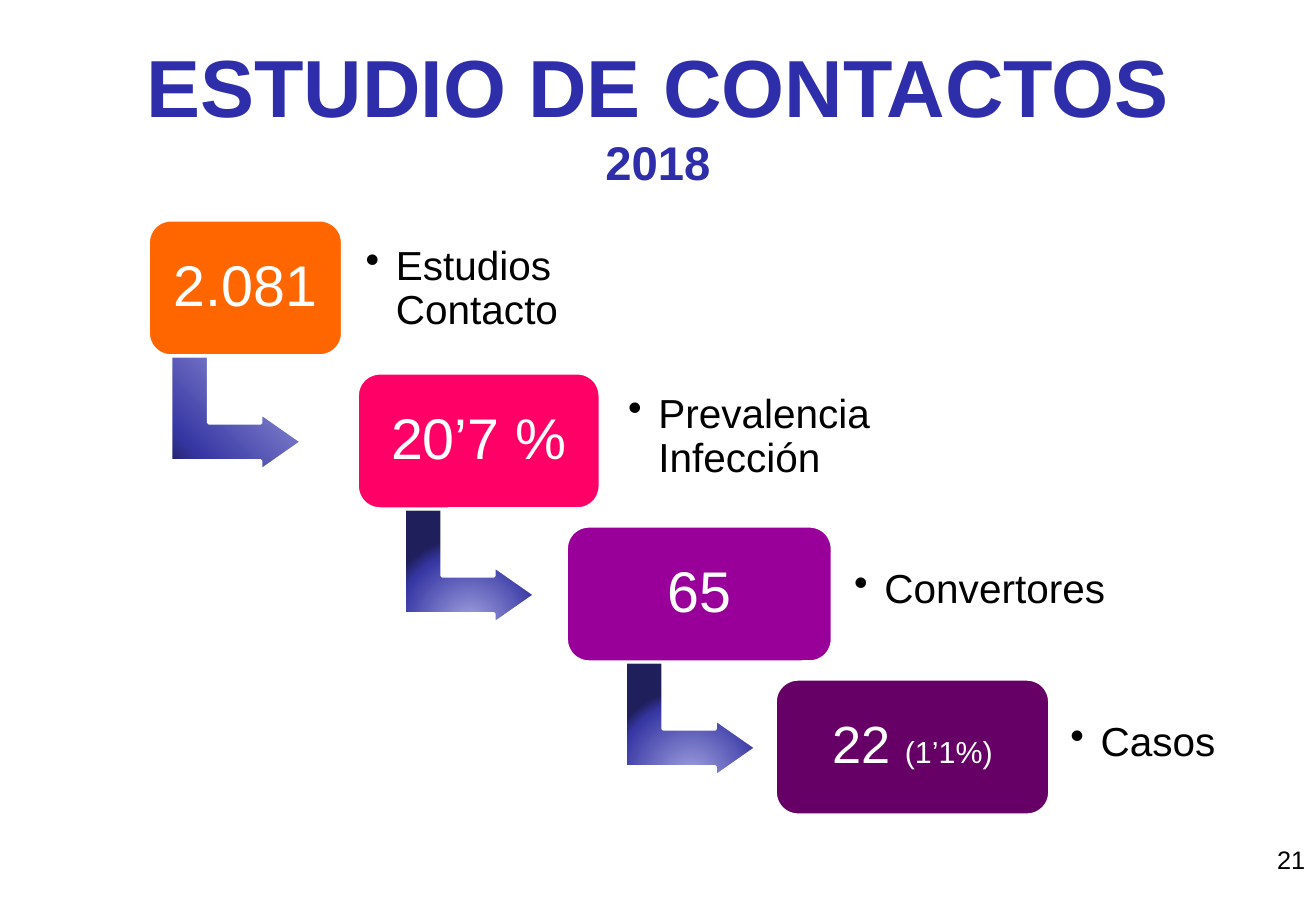
from lxml import etree
from pptx import Presentation
from pptx import util as u
from pptx.dml.color import RGBColor
from pptx.enum import shapes, text
from pptx.oxml import parse_xml
from pptx.oxml.ns import nsdecls, qn

PX = 9144
WHITE = RGBColor(0xFF, 0xFF, 0xFF)
BLACK = RGBColor(0x00, 0x00, 0x00)
BLUE = RGBColor(0x2E, 0x2E, 0xAA)
ORANGE = RGBColor(0xFF, 0x66, 0x00)
PINK = RGBColor(0xFF, 0x00, 0x66)
PURPLE = RGBColor(0x99, 0x00, 0x99)
PLUM = RGBColor(0x66, 0x00, 0x66)
GLOW = RGBColor(0xA3, 0xA3, 0xE0)
INDIGO = RGBColor(0x37, 0x37, 0xA4)
NAVY = RGBColor(0x1F, 0x1F, 0x5C)

DIAGONAL = '<a:lin ang="2700000" scaled="0"/>'
RADIAL = ('<a:path path="circle"><a:fillToRect l="50000" t="130000" '
          'r="50000" b="-30000"/></a:path>')


def px(value):
    return u.Emu(value * PX)


def write(frame, runs, color=BLACK, bold=False, align=text.PP_ALIGN.LEFT,
          anchor=text.MSO_ANCHOR.MIDDLE, inset=(10, 10), spacing=None,
          bullet=False, breaks=False):
    frame.word_wrap = True
    frame.vertical_anchor = anchor
    frame.margin_left = frame.margin_right = px(inset[0])
    frame.margin_top = frame.margin_bottom = px(inset[1])
    paragraph = frame.paragraphs[0]
    if bullet:
        properties = paragraph._p.get_or_add_pPr()
        properties.set("marL", str(px(25)))
        properties.set("indent", str(px(-25)))
        etree.SubElement(properties, qn("a:buChar")).set("char", "•")
    paragraph.alignment = align
    if spacing:
        paragraph.line_spacing = spacing
    for index, (words, size) in enumerate(runs):
        if breaks and index:
            paragraph.add_line_break()
        run = paragraph.add_run()
        run.text = words
        run.font.name = "Arial"
        run.font.size = u.Pt(size)
        run.font.bold = bold
        run.font.color.rgb = color


class Deck:
    def __init__(self, width, height):
        self.presentation = Presentation()
        self.presentation.slide_width = px(width)
        self.presentation.slide_height = px(height)
        self.slide = self.presentation.slides.add_slide(
            self.presentation.slide_layouts[6])

    def shape(self, kind, box, adjustments):
        shape = self.slide.shapes.add_shape(kind, *map(px, box))
        shape.shadow.inherit = False
        shape.line.color.rgb = WHITE
        shape.line.width = u.Pt(2)
        for index, value in enumerate(adjustments):
            shape.adjustments[index] = value
        return shape

    def card(self, box, color, runs):
        shape = self.shape(shapes.MSO_SHAPE.ROUNDED_RECTANGLE, box, [0.167])
        shape.fill.solid()
        shape.fill.fore_color.rgb = color
        write(shape.text_frame, runs, color=WHITE, spacing=0.9,
              align=text.PP_ALIGN.CENTER, inset=(14, 14))

    def arrow(self, box, middle, direction, turns):
        shape = self.shape(shapes.MSO_SHAPE.BENT_UP_ARROW, box,
                           [0.328, 0.25, 0.358])
        shape.rotation = 90
        stops = "".join(
            f'<a:gs pos="{position * 1000}"><a:srgbClr val="{color}"/></a:gs>'
            for position, color in ((0, GLOW), (middle, INDIGO), (100, NAVY)))
        gradient = parse_xml(
            f'<a:gradFill {nsdecls("a")} rotWithShape="{turns}">'
            f'<a:gsLst>{stops}</a:gsLst>{direction}</a:gradFill>')
        shape._element.spPr.find(qn("a:prstGeom")).addnext(gradient)

    def label(self, box, runs, **style):
        frame = self.slide.shapes.add_textbox(*map(px, box)).text_frame
        write(frame, runs, **style)


STEPS = [
    (160, ORANGE, [("2.081", 34)], (291, 193, 281), "Estudios Contacto"),
    (200, PINK, [("20’7 %", 34)], (507, 315, 306), "Prevalencia Infección"),
    (219, PURPLE, [("65", 34)], (693, 441, 229), "Convertores"),
    (226, PLUM, [("22 ", 31), ("(1’1%)", 18)], (871, 567, 190), "Casos"),
]
ARROWS = [(147, 82, DIAGONAL, 1), (339, 82, RADIAL, 0), (521, 85, RADIAL, 0)]
STEP_X, STEP_Y = 172, 126


def main():
    deck = Deck(1083, 750)
    for row, (left, middle, direction, turns) in enumerate(ARROWS):
        deck.arrow((left, 286 + row * STEP_Y, 95, 108), middle, direction, turns)
    for row, (width, color, figure, place, caption) in enumerate(STEPS):
        deck.card((122 + row * STEP_X, 181 + row * STEP_Y, width, 112),
                  color, figure)
        deck.label((*place, 90), [(caption, 24)], spacing=0.9, bullet=True)
    deck.label((831, 690, 253, 60), [("21", 15)], align=text.PP_ALIGN.RIGHT,
               anchor=text.MSO_ANCHOR.TOP, inset=(10, 5))
    deck.label((0, 24, 1083, 138), [("ESTUDIO DE CONTACTOS", 48), ("2018", 28)],
               color=BLUE, bold=True, align=text.PP_ALIGN.CENTER,
               inset=(10, 5), breaks=True)
    deck.presentation.save("out.pptx")


if __name__ == "__main__":
    main()
